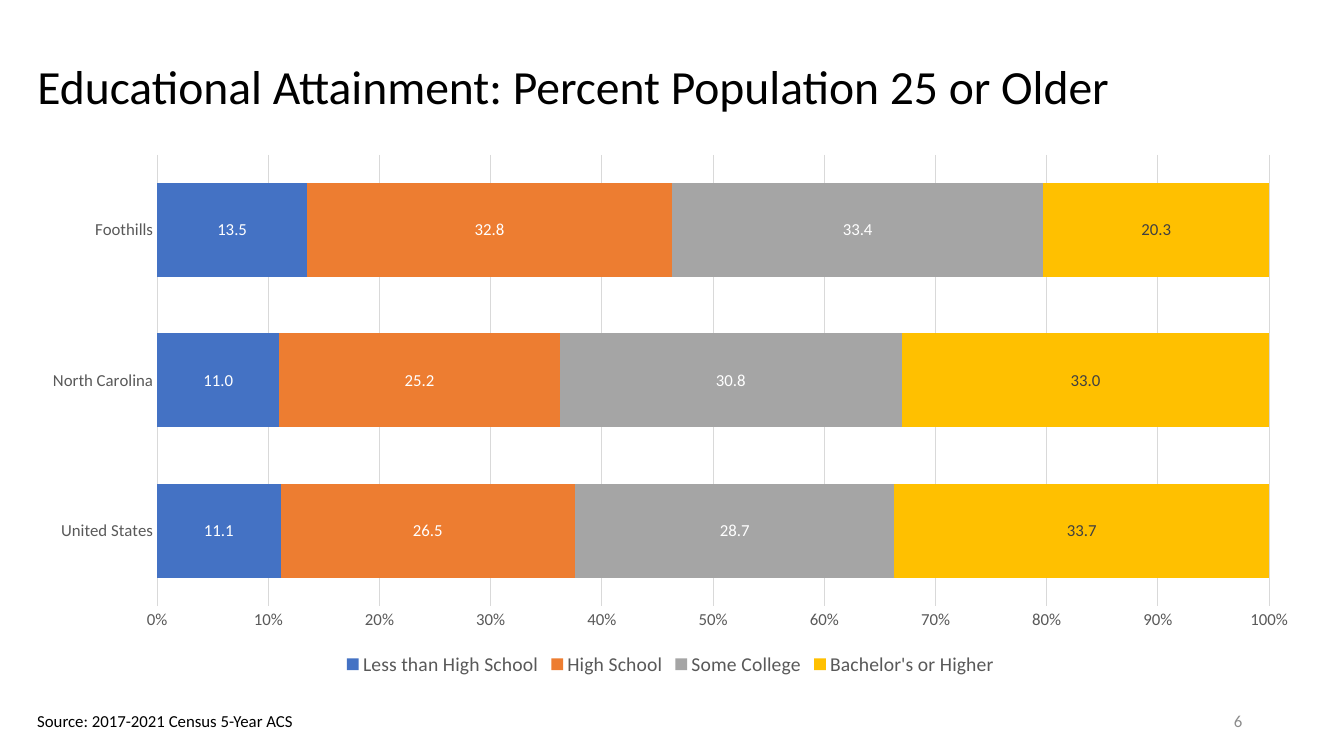
from dataclasses import dataclass

import pptx
import pptx.chart.data
import pptx.dml.color
import pptx.enum.chart
import pptx.enum.text
import pptx.util

Inches = pptx.util.Inches
Align = pptx.enum.text.PP_ALIGN
Anchor = pptx.enum.text.MSO_ANCHOR


@dataclass(frozen=True)
class Theme:
    face: str = "Calibri"
    ink: str = "000000"
    axis: str = "595959"
    grid: str = "D9D9D9"
    page: str = "8C8C8C"
    light: str = "FFFFFF"
    dark: str = "404040"
    head: int = 34
    key: int = 14
    small: int = 12
    base: int = 10
    rule: float = 0.75


THEME = Theme()
LEFT, WIDE = 0.27, 12.76
AREAS = ["United States", "North Carolina", "Foothills"]
# Level, share in each area, bar colour, label colour
LEVELS = [
    ("Less than High School", (11.1, 11.0, 13.5), "4472C4", THEME.light),
    ("High School", (26.5, 25.2, 32.8), "ED7D31", THEME.light),
    ("Some College", (28.7, 30.8, 33.4), "A5A5A5", THEME.light),
    ("Bachelor's or Higher", (33.7, 33.0, 20.3), "FFC000", THEME.dark),
]


def rgb(code):
    return pptx.dml.color.RGBColor.from_string(code)


def style(font, size, color):
    font.name = THEME.face
    font.size = pptx.util.Pt(size)
    font.color.rgb = rgb(color)


def rule(line):
    line.color.rgb = rgb(THEME.grid)
    line.width = pptx.util.Pt(THEME.rule)


def place(shape, left, top, width, height):
    shape.left, shape.top = Inches(left), Inches(top)
    shape.width, shape.height = Inches(width), Inches(height)


def write(frame, text, size, color, align, anchor):
    frame.text = text
    frame.vertical_anchor = anchor
    para = frame.paragraphs[0]
    para.alignment = align
    style(para.runs[0].font, size, color)


def add_title(slide, text):
    title = slide.shapes.title
    place(title, LEFT, 0.34, WIDE, 1.09)
    write(title.text_frame, text, THEME.head, THEME.ink, Align.LEFT, Anchor.MIDDLE)
    title.text_frame.paragraphs[0].line_spacing = 0.9


def add_note(slide, text, box, color, align, anchor, wrap):
    note = slide.shapes.add_textbox(*map(Inches, box))
    write(note.text_frame, text, THEME.small, color, align, anchor)
    note.text_frame.word_wrap = wrap


def set_axes(chart):
    for axis in (chart.category_axis, chart.value_axis):
        axis.major_tick_mark = pptx.enum.chart.XL_TICK_MARK.NONE
        axis.minor_tick_mark = pptx.enum.chart.XL_TICK_MARK.NONE
        style(axis.tick_labels.font, THEME.small, THEME.axis)
    rule(chart.category_axis.format.line)
    share = chart.value_axis
    share.format.line.fill.background()
    share.has_major_gridlines = True
    rule(share.major_gridlines.format.line)
    share.tick_labels.number_format = "0%"
    share.tick_labels.number_format_is_linked = False


def set_bars(plot):
    plot.gap_width = 60
    plot.overlap = 100
    plot.vary_by_categories = False
    for bar, (_, _, fill, ink) in zip(plot.series, LEVELS):
        bar.format.fill.solid()
        bar.format.fill.fore_color.rgb = rgb(fill)
        labels = bar.data_labels
        labels.show_value = True
        labels.number_format = "#,##0.0"
        labels.number_format_is_linked = False
        style(labels.font, THEME.small, ink)


def add_bars(slide):
    data = pptx.chart.data.CategoryChartData(number_format="#,##0.0")
    data.categories = AREAS
    for name, shares, _, _ in LEVELS:
        data.add_series(name, shares)
    kind = pptx.enum.chart.XL_CHART_TYPE.BAR_STACKED_100
    box = map(Inches, (LEFT, 1.43, WIDE, 5.32))
    chart = slide.shapes.add_chart(kind, *box, data).chart
    style(chart.font, THEME.base, THEME.ink)
    chart.has_title = False
    chart.has_legend = True
    chart.legend.position = pptx.enum.chart.XL_LEGEND_POSITION.BOTTOM
    chart.legend.include_in_layout = False
    style(chart.legend.font, THEME.key, THEME.axis)
    set_axes(chart)
    set_bars(chart.plots[0])


def main():
    deck = pptx.Presentation()
    deck.slide_width, deck.slide_height = Inches(13.33), Inches(7.5)
    slide = deck.slides.add_slide(deck.slide_layouts.get_by_name("Title Only"))
    add_title(slide, "Educational Attainment: Percent Population 25 or Older")
    add_bars(slide)
    add_note(slide, "6", (9.42, 6.95, 3, 0.4), THEME.page,
             Align.RIGHT, Anchor.MIDDLE, True)
    add_note(slide, "Source: 2017-2021 Census 5-Year ACS", (LEFT, 7, 2.78, 0.3),
             THEME.ink, Align.LEFT, Anchor.TOP, False)
    deck.save("out.pptx")


if __name__ == "__main__":
    main()
